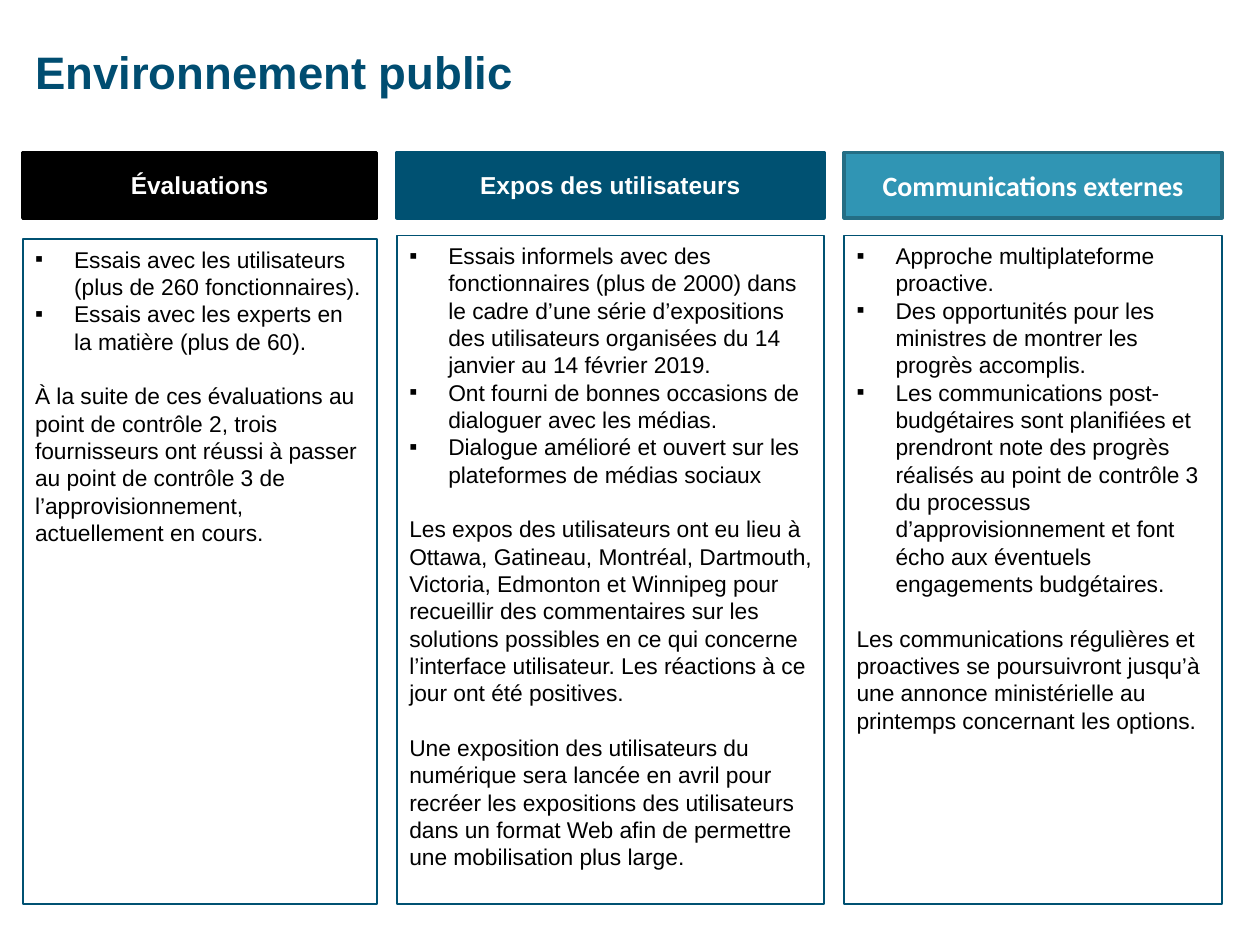
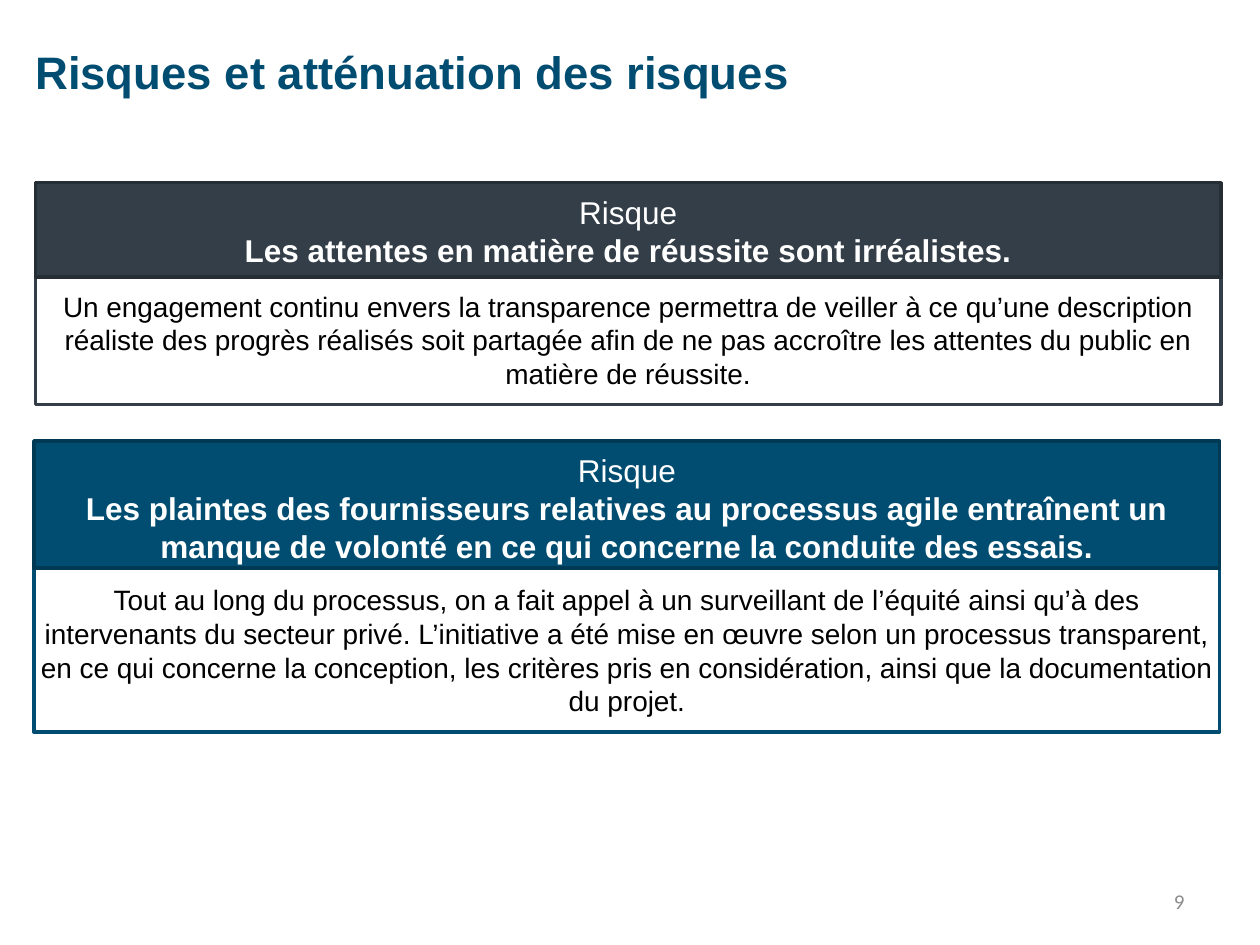
from dataclasses import dataclass

from lxml import etree
from pptx import Presentation
from pptx.dml.color import RGBColor
from pptx.enum.shapes import MSO_SHAPE
from pptx.enum.text import MSO_ANCHOR, PP_ALIGN
from pptx.oxml.ns import qn
from pptx.shapes.autoshape import Shape
from pptx.slide import Slide
from pptx.text.text import TextFrame
from pptx.util import Inches, Pt

RECTANGLE = MSO_SHAPE.RECTANGLE
TOP, MIDDLE = MSO_ANCHOR.TOP, MSO_ANCHOR.MIDDLE
LEFT, CENTER, RIGHT = PP_ALIGN.LEFT, PP_ALIGN.CENTER, PP_ALIGN.RIGHT

BLACK = RGBColor(0x00, 0x00, 0x00)
WHITE = RGBColor(0xFF, 0xFF, 0xFF)
NAVY = RGBColor(0x00, 0x4D, 0x71)
DARK_NAVY = RGBColor(0x00, 0x39, 0x54)
PETROL = RGBColor(0x00, 0x51, 0x72)
TEAL = RGBColor(0x30, 0x95, 0xB4)
DARK_TEAL = RGBColor(0x24, 0x6E, 0x85)
SLATE = RGBColor(0x33, 0x3E, 0x48)
DARK_SLATE = RGBColor(0x26, 0x2E, 0x35)
GREY = RGBColor(0x8C, 0x8C, 0x8C)

# The slide is a grid of 100 columns by 100 rows.
SLIDE_WIDTH, SLIDE_HEIGHT = Inches(10), Inches(7.5)
COLUMN, ROW = SLIDE_WIDTH / 100, SLIDE_HEIGHT / 100

BULLET_INDENT = Inches(0.31)
BLANK_LINE = Pt(15.6)
TOPICS_LEFT, TOPIC_GAP = 1.8, 1.6
TOPIC_HEAD_TOP, TOPIC_HEAD_HEIGHT = 16.13, 6.93
TOPICS_BOTTOM = 95.65


@dataclass(frozen=True)
class Area:
    """Left and width in grid columns, top and height in grid rows."""
    left: float
    top: float
    width: float
    height: float

    def emu(self) -> tuple[int, int, int, int]:
        return (round(self.left * COLUMN), round(self.top * ROW),
                round(self.width * COLUMN), round(self.height * ROW))


@dataclass(frozen=True)
class TextStyle:
    size: float
    color: RGBColor
    bold: bool = False
    font: str = "Arial"
    align: PP_ALIGN = LEFT


@dataclass(frozen=True)
class Topic:
    heading: str
    style: TextStyle
    fill: RGBColor
    border: RGBColor
    width: float
    body_top: float
    bullets: tuple[str, ...]
    remarks: tuple[str, ...]


@dataclass(frozen=True)
class Risk:
    statement: str
    mitigation: str
    fill: RGBColor
    border: RGBColor
    left: float
    top: float
    band_height: float
    mitigation_top: float
    mitigation_height: float


TITLE = TextStyle(26, NAVY, bold=True)
TOPIC_HEAD = TextStyle(14, WHITE, bold=True, align=CENTER)
TOPIC_HEAD_CALIBRI = TextStyle(16, WHITE, bold=True, font="Calibri", align=CENTER)
TOPIC_BODY = TextStyle(13, BLACK)
RISK_LABEL = TextStyle(18, WHITE, align=CENTER)
RISK_STATEMENT = TextStyle(18, WHITE, bold=True, align=CENTER)
MITIGATION = TextStyle(16, BLACK, align=CENTER)
PAGE_NUMBER = TextStyle(12, GREY, font="Calibri", align=RIGHT)

TITLE_AREA = Area(2.8, 1.2, 82.3, 12.8)
PAGE_NUMBER_AREA = Area(71.7, 92.67, 23.3, 5.33)
RISK_WIDTH = 94.1

TOPICS = (
    Topic(
        "Évaluations", TOPIC_HEAD, BLACK, BLACK, 28.1, 25.33,
        ("Essais avec les utilisateurs (plus de 260 fonctionnaires).",
         "Essais avec les experts en la matière (plus de 60)."),
        ("À la suite de ces évaluations au point de contrôle 2, trois fournisseurs ont "
         "réussi à passer au point de contrôle 3 de l’approvisionnement, actuellement "
         "en cours.",)),
    Topic(
        "Expos des utilisateurs", TOPIC_HEAD, PETROL, PETROL, 33.9, 24.93,
        ("Essais informels avec des fonctionnaires (plus de 2000) dans le cadre d’une "
         "série d’expositions des utilisateurs organisées du 14 janvier au "
         "14 février 2019.",
         "Ont fourni de bonnes occasions de dialoguer avec les médias.",
         "Dialogue amélioré et ouvert sur les plateformes de médias sociaux"),
        ("Les expos des utilisateurs ont eu lieu à Ottawa, Gatineau, Montréal, "
         "Dartmouth, Victoria, Edmonton et Winnipeg pour recueillir des commentaires "
         "sur les solutions possibles en ce qui concerne l’interface utilisateur. Les "
         "réactions à ce jour ont été positives.",
         "Une exposition des utilisateurs du numérique sera lancée en avril pour "
         "recréer les expositions des utilisateurs dans un format Web afin de "
         "permettre une mobilisation plus large.")),
    Topic(
        "Communications externes", TOPIC_HEAD_CALIBRI, TEAL, DARK_TEAL, 30, 24.93,
        ("Approche multiplateforme proactive.",
         "Des opportunités pour les ministres de montrer les progrès accomplis.",
         "Les communications post-budgétaires sont planifiées et prendront note des "
         "progrès réalisés au point de contrôle 3 du processus d’approvisionnement et "
         "font écho aux éventuels engagements budgétaires."),
        ("Les communications régulières et proactives se poursuivront jusqu’à une "
         "annonce ministérielle au printemps concernant les options.",)),
)

RISKS = (
    Risk(
        "Les attentes en matière de réussite sont irréalistes.",
        "Un engagement continu envers la transparence permettra de veiller à ce qu’une "
        "description réaliste des progrès réalisés soit partagée afin de ne pas "
        "accroître les attentes du public en matière de réussite.",
        SLATE, DARK_SLATE, 2.8, 19.33, 10, 29.07, 13.73),
    Risk(
        "Les plaintes des fournisseurs relatives au processus agile entraînent un "
        "manque de volonté en ce qui concerne la conduite des essais.",
        "Tout au long du processus, on a fait appel à un surveillant de l’équité ainsi "
        "qu’à des intervenants du secteur privé. L’initiative a été mise en œuvre selon "
        "un processus transparent, en ce qui concerne la conception, les critères pris "
        "en considération, ainsi que la documentation du projet.",
        NAVY, DARK_NAVY, 2.7, 46.67, 13.47, 60.13, 17.33),
)


def set_up_frame(frame: TextFrame, anchor: MSO_ANCHOR,
                 side: float = 0.1, edge: float = 0.05) -> None:
    """Wrap the text and set its anchor and its margins in inches."""
    frame.word_wrap = True
    frame.vertical_anchor = anchor
    frame.margin_left = frame.margin_right = Inches(side)
    frame.margin_top = frame.margin_bottom = Inches(edge)


def write(frame: TextFrame, text: str, style: TextStyle,
          bullet: bool = False, space_before: int = 0) -> None:
    """Fill the empty first paragraph, or add one after the others."""
    first = frame.paragraphs[0]
    paragraph = frame.add_paragraph() if first.runs else first
    paragraph.add_run().text = text
    if bullet:
        properties = paragraph._p.get_or_add_pPr()
        properties.set("marL", str(BULLET_INDENT))
        properties.set("indent", str(-BULLET_INDENT))
        etree.SubElement(properties, qn("a:buFont")).set("typeface", "Arial")
        etree.SubElement(properties, qn("a:buChar")).set("char", "▪")
    paragraph.alignment = style.align
    if space_before:
        paragraph.space_before = space_before
    paragraph.font.name = style.font
    paragraph.font.size = Pt(style.size)
    paragraph.font.bold = style.bold
    paragraph.font.color.rgb = style.color


def add_panel(slide: Slide, area: Area, border: RGBColor, border_width: float,
              fill: RGBColor | None = None) -> Shape:
    panel = slide.shapes.add_shape(RECTANGLE, *area.emu())
    panel.shadow.inherit = False
    if fill is None:
        panel.fill.background()
    else:
        panel.fill.solid()
        panel.fill.fore_color.rgb = fill
    panel.line.color.rgb = border
    panel.line.width = Pt(border_width)
    return panel


def add_label(slide: Slide, area: Area, text: str, style: TextStyle,
              side: float = 0.1, edge: float = 0.05) -> None:
    frame = slide.shapes.add_textbox(*area.emu()).text_frame
    set_up_frame(frame, MIDDLE, side, edge)
    write(frame, text, style)


def add_titled_slide(deck: Presentation, title: str) -> Slide:
    slide = deck.slides.add_slide(deck.slide_layouts[6])
    add_label(slide, TITLE_AREA, title, TITLE, 0, 0)
    return slide


def draw_topic(slide: Slide, topic: Topic, left: float) -> None:
    body_area = Area(left, topic.body_top, topic.width, TOPICS_BOTTOM - topic.body_top)
    body = add_panel(slide, body_area, PETROL, 1).text_frame
    set_up_frame(body, TOP)
    for bullet in topic.bullets:
        write(body, bullet, TOPIC_BODY, bullet=True)
    for remark in topic.remarks:
        write(body, remark, TOPIC_BODY, space_before=BLANK_LINE)

    head_area = Area(left, TOPIC_HEAD_TOP, topic.width, TOPIC_HEAD_HEIGHT)
    head = add_panel(slide, head_area, topic.border, 2, topic.fill).text_frame
    set_up_frame(head, MIDDLE)
    write(head, topic.heading, topic.style)


def draw_risk(slide: Slide, risk: Risk) -> None:
    mitigation_area = Area(risk.left, risk.mitigation_top, RISK_WIDTH,
                           risk.mitigation_height)
    mitigation = add_panel(slide, mitigation_area, risk.fill, 2, WHITE).text_frame
    set_up_frame(mitigation, MIDDLE, 0, 0)
    write(mitigation, risk.mitigation, MITIGATION)

    band_area = Area(risk.left, risk.top, RISK_WIDTH, risk.band_height)
    band = add_panel(slide, band_area, risk.border, 2, risk.fill).text_frame
    set_up_frame(band, TOP, 0.04, 0.08)
    write(band, "Risque", RISK_LABEL)
    write(band, risk.statement, RISK_STATEMENT)


def main() -> None:
    deck = Presentation()
    deck.slide_width, deck.slide_height = SLIDE_WIDTH, SLIDE_HEIGHT

    environment = add_titled_slide(deck, "Environnement public")
    left = TOPICS_LEFT
    for topic in TOPICS:
        draw_topic(environment, topic, left)
        left += topic.width + TOPIC_GAP

    risks = add_titled_slide(deck, "Risques et atténuation des risques")
    for risk in RISKS:
        draw_risk(risks, risk)
    add_label(risks, PAGE_NUMBER_AREA, "9", PAGE_NUMBER)

    deck.save("out.pptx")


if __name__ == "__main__":
    main()
